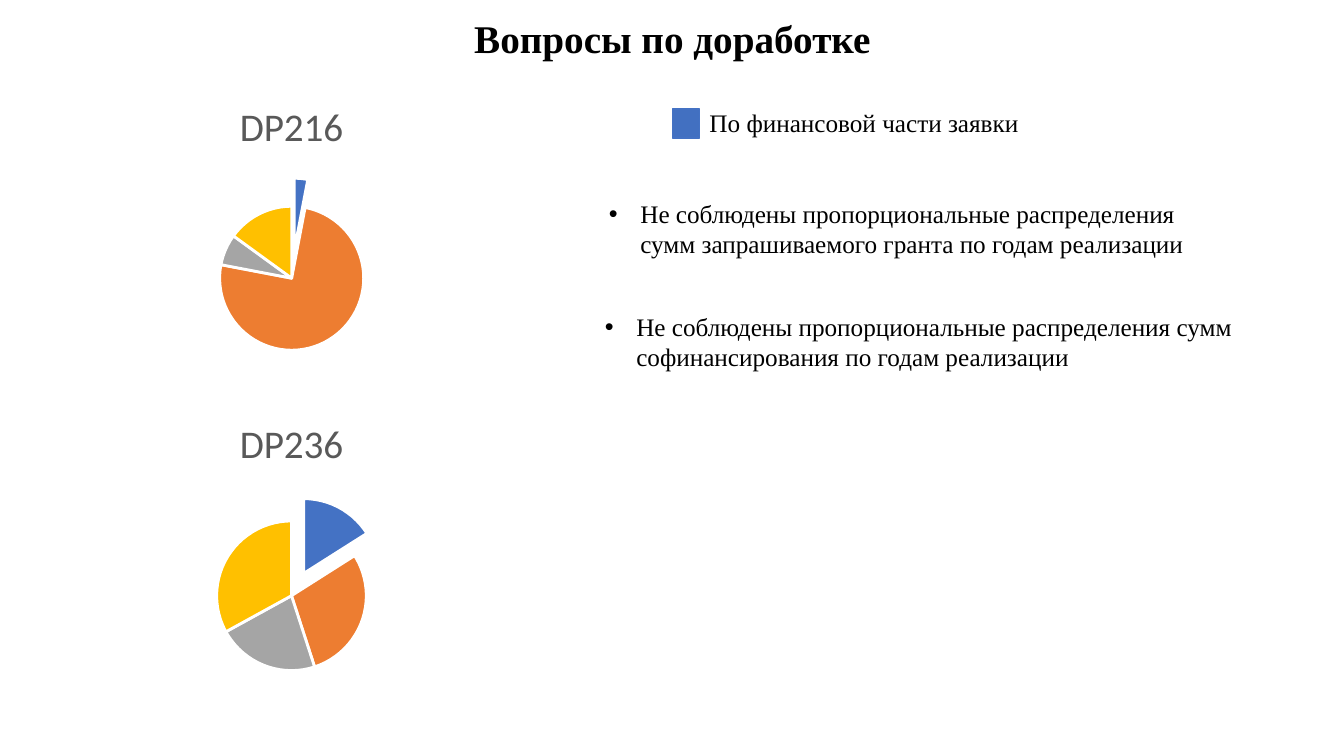
"""Build the slide of revision questions with two pie charts."""
from dataclasses import dataclass

from lxml import etree
from pptx import Presentation
from pptx import util as u
from pptx.chart.data import CategoryChartData
from pptx.dml.color import RGBColor
from pptx.enum import chart as charts
from pptx.enum import shapes, text
from pptx.oxml.ns import qn

SERIF = "Times New Roman"
SLICE_COLOURS = ("4472C4", "ED7D31", "A5A5A5", "FFC000")
PIE_CENTRE = (0.5, 0.63)


@dataclass
class Frame:
    left: float
    top: float
    width: float
    height: float

    def lengths(self) -> tuple:
        return tuple(u.Pt(n) for n in (self.left, self.top, self.width, self.height))


@dataclass
class Pie:
    title: str
    top: float
    values: tuple
    explosion: int
    diameter: float


@dataclass
class Label:
    words: str
    frame: Frame
    size: float = 18
    bold: bool = False
    bullet: bool = False
    centred: bool = False


TITLE = Label("Вопросы по доработке", Frame(249, 6.5, 462.5, 41), 28, bold=True, centred=True)
LEGEND = Label("По финансовой части заявки", Frame(499.7, 73.4, 245, 29))
BULLETS = (
    Label("Не соблюдены пропорциональные распределения сумм запрашиваемого гранта "
          "по годам реализации", Frame(427.7, 138.2, 441.4, 51), bullet=True),
    Label("Не соблюдены пропорциональные распределения сумм софинансирования "
          "по годам реализации", Frame(424.8, 218.9, 480.2, 51), bullet=True),
)
PIES = (
    Pie("DP216", 58.3, (3, 75, 7, 15), 39, 103),
    Pie("DP236", 285.1, (16, 29, 22, 33), 34, 107),
)


def paint(colour_format, colour: str) -> None:
    colour_format.rgb = RGBColor.from_string(colour)


def write(box, label: Label) -> None:
    box.left, box.top, box.width, box.height = label.frame.lengths()
    frame = box.text_frame
    frame.word_wrap = True
    frame.auto_size = text.MSO_AUTO_SIZE.NONE
    para = frame.paragraphs[0]
    para.alignment = text.PP_ALIGN.CENTER if label.centred else text.PP_ALIGN.LEFT
    para.space_before = u.Pt(0)
    if label.bullet:
        properties = para._p.get_or_add_pPr()
        properties.set("marL", str(u.Pt(22.5)))
        properties.set("indent", str(u.Pt(-22.5)))
    span = para.add_run()
    span.text = label.words
    span.font.name = SERIF
    span.font.size = u.Pt(label.size)
    span.font.bold = label.bold
    paint(span.font.color, "000000")


def place(element, index: int, **fractions: float) -> None:
    for old in element.findall(qn("c:layout")):
        element.remove(old)
    layout = etree.Element(qn("c:layout"))
    manual = etree.SubElement(layout, qn("c:manualLayout"))
    if "w" in fractions:
        etree.SubElement(manual, qn("c:layoutTarget")).set("val", "inner")
    for axis in "xy":
        etree.SubElement(manual, qn(f"c:{axis}Mode")).set("val", "edge")
    for name, fraction in fractions.items():
        etree.SubElement(manual, qn(f"c:{name}")).set("val", f"{fraction:.3f}")
    element.insert(index, layout)


def add_pie(page, pie: Pie) -> None:
    data = CategoryChartData()
    data.categories = ("1", "2", "3", "4")
    data.add_series("Series 1", pie.values)
    frame = Frame(77, pie.top, 262.8, 223.2)
    chart = page.shapes.add_chart(charts.XL_CHART_TYPE.PIE, *frame.lengths(), data).chart
    chart.has_legend = False
    chart.font.name = "Calibri"
    chart.font.size = u.Pt(10)
    paint(chart.font.color, "000000")

    span = chart.chart_title.text_frame.paragraphs[0].add_run()
    span.text = pie.title
    span.font.name = "Calibri"
    span.font.size = u.Pt(28)
    span.font.bold = False
    paint(span.font.color, "595959")
    place(chart.chart_title._element, 1, x=0.34, y=0.035)
    width, height = pie.diameter / frame.width, pie.diameter / frame.height
    place(chart._chartSpace.chart.plotArea, 0, x=PIE_CENTRE[0] - width / 2,
          y=PIE_CENTRE[1] - height / 2, w=width, h=height)

    plot = chart.plots[0]
    plot.vary_by_categories = True
    for index, colour in enumerate(SLICE_COLOURS):
        point = plot.series[0].points[index]
        point.format.fill.solid()
        paint(point.format.fill.fore_color, colour)
        point.format.line.width = u.Pt(2)
        paint(point.format.line.color, "FFFFFF")
    first = plot.series[0]._element.find(qn("c:dPt"))
    explosion = etree.Element(qn("c:explosion"))
    explosion.set("val", str(pie.explosion))
    first.find(qn("c:spPr")).addprevious(explosion)


def add_legend_key(page) -> None:
    frame = Frame(480.2, 77.8, 19.5, 20.9)
    key = page.shapes.add_shape(shapes.MSO_SHAPE.RECTANGLE, *frame.lengths())
    key.shadow.inherit = False
    key.fill.solid()
    paint(key.fill.fore_color, "4270C1")
    key.line.width = u.Pt(1)
    paint(key.line.color, "4472C4")


def main() -> None:
    deck = Presentation()
    deck.slide_width, deck.slide_height = u.Pt(960), u.Pt(540)
    page = deck.slides.add_slide(deck.slide_layouts.get_by_name("Two Content"))
    for box, label in zip(page.placeholders, (TITLE, *BULLETS)):
        write(box, label)
    for pie in PIES:
        add_pie(page, pie)
    add_legend_key(page)
    write(page.shapes.add_textbox(*LEGEND.frame.lengths()), LEGEND)
    deck.save("out.pptx")


if __name__ == "__main__":
    main()
